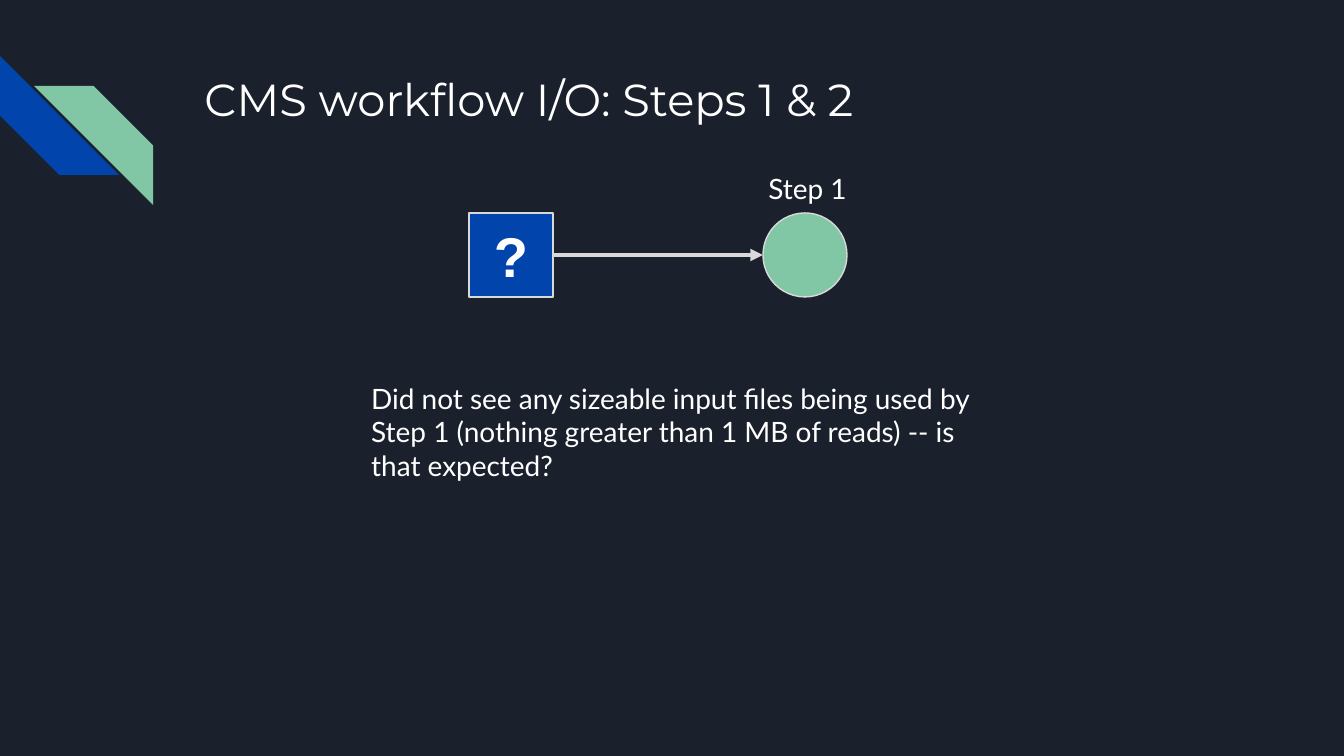
import pptx
import pptx.chart.data
import pptx.dml.color
import pptx.enum.shapes
import pptx.enum.text
import pptx.oxml
import pptx.oxml.ns
import pptx.util
from lxml import etree

RGBColor = pptx.dml.color.RGBColor
SHAPES = pptx.enum.shapes.MSO_SHAPE
ALIGN = pptx.enum.text.PP_ALIGN
ANCHOR = pptx.enum.text.MSO_ANCHOR

NAVY = RGBColor(0x1B, 0x21, 0x2C)
BLUE = RGBColor(0x01, 0x45, 0xAC)
GREEN = RGBColor(0x82, 0xC7, 0xA5)
GREY = RGBColor(0xD9, 0xD9, 0xD9)
WHITE = RGBColor(0xFF, 0xFF, 0xFF)

TITLE = "CMS workflow I/O: Steps 1 & 2"
STEP = "Step 1"
UNKNOWN_INPUT = "?"
QUESTION = ("Did not see any sizeable input files being used by Step 1 "
            "(nothing greater than 1 MB of reads) -- is that expected?")

# Left, top, rotation, colour
STRIPES = [(0, 56, 270, BLUE), (34, 86, 90, GREEN)]
STRIPE_SIZE = 119

NODE_SIZE, NODE_TOP = 84, 213
INPUT_LEFT, STEP_LEFT = 469, 763

SCALE = 914400 / 134.4
INSET = 0.1


def px(*lengths):
    return [pptx.util.Emu(round(length * SCALE)) for length in lengths]


def add_shape(slide, kind, left, top, size, colour):
    shape = slide.shapes.add_shape(kind, *px(left, top, size, size))
    shape.shadow.inherit = False
    shape.fill.solid()
    shape.fill.fore_color.rgb = colour
    shape.line.fill.background()
    return shape


def add_node(slide, kind, left, colour):
    node = add_shape(slide, kind, left, NODE_TOP, NODE_SIZE, colour)
    node.line.color.rgb = GREY
    node.line.width = pptx.util.Pt(0.75)
    return node


def place(shape, left, top, width, height):
    shape.left, shape.top, shape.width, shape.height = px(left, top, width, height)


def write(shape, text, font, size, align=ALIGN.LEFT, anchor=ANCHOR.TOP, bold=False):
    frame = shape.text_frame
    frame.word_wrap = True
    frame.auto_size = pptx.enum.text.MSO_AUTO_SIZE.NONE
    frame.vertical_anchor = anchor
    frame.margin_left = frame.margin_right = pptx.util.Inches(INSET)
    frame.margin_top = frame.margin_bottom = pptx.util.Inches(INSET)
    paragraph = frame.paragraphs[0]
    paragraph.alignment = align
    run = paragraph.add_run()
    run.text = text
    run.font.name = font
    run.font.size = pptx.util.Pt(size)
    run.font.bold = bold
    run.font.color.rgb = WHITE
    return paragraph


def remove_bullet(paragraph):
    properties = paragraph._p.get_or_add_pPr()
    properties.set("marL", "0")
    properties.set("indent", "0")
    etree.SubElement(properties, pptx.oxml.ns.qn("a:buNone"))


def add_arrow(slide, start, end, y):
    arrow = slide.shapes.add_connector(
        pptx.enum.shapes.MSO_CONNECTOR.STRAIGHT, *px(start, y, end, y))
    arrow.line.color.rgb = GREY
    arrow.line.width = pptx.util.Pt(2.25)
    head = etree.SubElement(arrow.line._get_or_add_ln(), pptx.oxml.ns.qn("a:tailEnd"))
    head.set("type", "triangle")
    etree.SubElement(arrow._element.spPr, pptx.oxml.ns.qn("a:effectLst"))


def main():
    deck = pptx.Presentation()
    deck.slide_width, deck.slide_height = px(1344, 756)
    slide = deck.slides.add_slide(deck.slide_layouts[1])
    slide.background.fill.solid()
    slide.background.fill.fore_color.rgb = NAVY

    for left, top, rotation, colour in STRIPES:
        stripe = add_shape(slide, SHAPES.DIAGONAL_STRIPE, left, top, STRIPE_SIZE, colour)
        stripe.rotation = rotation

    title, step_label = slide.placeholders
    place(title, 191, 58, 1035, 134)
    write(title, TITLE, "Montserrat", 24)

    place(step_label, 741, 153, 133, 51)
    label = write(step_label, STEP, "Lato", 15, ALIGN.CENTER)
    label.line_spacing = 1.15
    label.space_before = pptx.util.Pt(0)
    label.space_after = pptx.util.Pt(16)
    remove_bullet(label)

    input_node = add_node(slide, SHAPES.RECTANGLE, INPUT_LEFT, BLUE)
    write(input_node, UNKNOWN_INPUT, "Arial", 30, ALIGN.CENTER, ANCHOR.MIDDLE, bold=True)
    add_node(slide, SHAPES.OVAL, STEP_LEFT, GREEN)
    add_arrow(slide, INPUT_LEFT + NODE_SIZE, STEP_LEFT, NODE_TOP + NODE_SIZE // 2)

    question = slide.shapes.add_textbox(*px(358, 368, 628, 134))
    write(question, QUESTION, "Lato", 15)

    deck.save("out.pptx")


if __name__ == "__main__":
    main()
